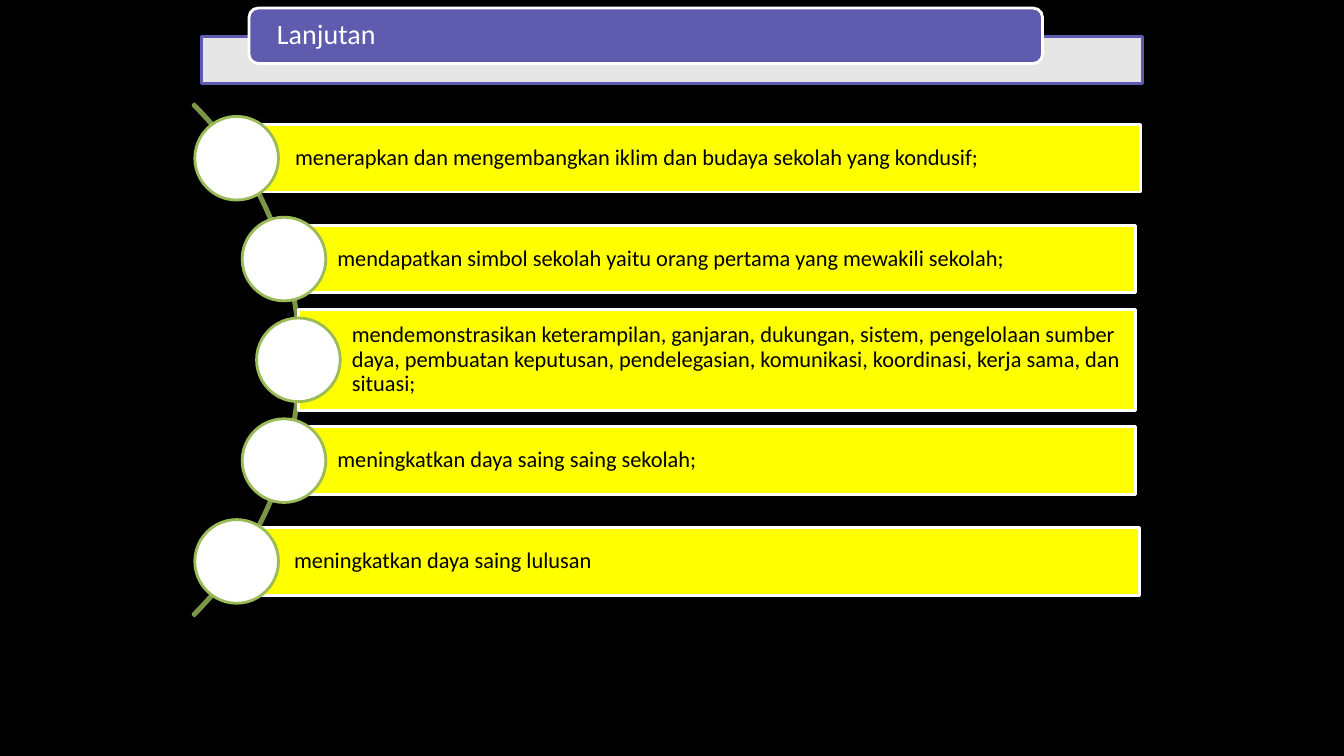
"""Build the 'Lanjutan' slide: a title tab and five bars strung along an arc."""
import math
import pptx
import pptx.util
import pptx.dml.color
import pptx.enum.shapes
import pptx.enum.text
import pptx.oxml
import pptx.oxml.ns

TITLE = "Lanjutan"
ITEMS = [
    {"text": "menerapkan dan mengembangkan iklim dan budaya sekolah yang kondusif;",
     "height": 0.67, "shift": 0.05},
    {"text": "mendapatkan simbol sekolah yaitu orang pertama yang mewakili sekolah;",
     "height": 0.67, "shift": 0},
    {"text": "mendemonstrasikan keterampilan, ganjaran, dukungan, sistem, pengelolaan "
             "sumber daya, pembuatan keputusan, pendelegasian, komunikasi, koordinasi, "
             "kerja sama, dan situasi;",
     "height": 1, "shift": 0},
    {"text": "meningkatkan daya saing saing sekolah;", "height": 0.67, "shift": 0},
    {"text": "meningkatkan daya saing lulusan", "height": 0.67, "shift": 0.04},
]
COLORS = {"back": "000000", "white": "FFFFFF", "violet": "5F5BAE", "yellow": "FFFF00",
          "arc": "7C9647", "ring": "9BBB59", "ink": "000000"}
FONT = "Calibri"
WIDTH, HEIGHT = 13.33, 7.5
PITCH = 1.0
CIRCLE = 0.83
ARC_X, ARC_Y = -0.61, 3.57
ARC_SIZE = 7.18
TRACK = 3.57
BAR_RIGHT = 11.26
SHAPES = pptx.enum.shapes.MSO_SHAPE


def rgb(name):
    return pptx.dml.color.RGBColor.from_string(COLORS[name])


def add_shape(s, kind, box, fill, line):
    sp = s.shapes.add_shape(kind, *[pptx.util.Inches(v) for v in box])
    sp.shadow.inherit = False
    if fill:
        sp.fill.solid()
        sp.fill.fore_color.rgb = rgb(fill)
    else:
        sp.fill.background()
    sp.line.color.rgb = rgb(line)
    sp.line.width = pptx.util.Pt(2)
    return sp


def add_text(sp, text, size, color, insets):
    tf = sp.text_frame
    tf.word_wrap = True
    tf.vertical_anchor = pptx.enum.text.MSO_ANCHOR.MIDDLE
    tf.margin_left, tf.margin_top, tf.margin_right, tf.margin_bottom = [
        pptx.util.Inches(v) for v in insets]
    p = tf.paragraphs[0]
    p.text = text
    p.alignment = pptx.enum.text.PP_ALIGN.LEFT
    p.line_spacing = 0.9
    f = p.runs[0].font
    f.name, f.size = FONT, pptx.util.Pt(size)
    f.color.rgb = rgb(color)


def add_title(s):
    panel = add_shape(s, SHAPES.RECTANGLE, (2, 0.36, 9.33, 0.47), "white", "violet")
    color = panel.fill._xPr.find(".//" + pptx.oxml.ns.qn("a:srgbClr"))
    color.append(pptx.oxml.parse_xml(
        "<a:alpha %s val='90000'/>" % pptx.oxml.ns.nsdecls("a")))
    tab = add_shape(s, SHAPES.ROUNDED_RECTANGLE, (2.47, 0.08, 7.87, 0.55), "violet", "white")
    add_text(tab, TITLE, 20, "white", (0.25, 0, 0.25, 0))


def add_arc(s):
    half = ARC_SIZE / 2
    arc = add_shape(s, SHAPES.BLOCK_ARC,
                    (ARC_X - half, ARC_Y - half, ARC_SIZE, ARC_SIZE), None, "arc")
    for i, value in enumerate((189, 27, 0.003)):
        arc.adjustments[i] = value


def add_items(s):
    for i, item in enumerate(ITEMS):
        dy = (i - (len(ITEMS) - 1) / 2) * PITCH
        x, y = ARC_X + math.sqrt(TRACK ** 2 - dy ** 2), ARC_Y + dy
        h, shift = item["height"], item["shift"]
        bar = add_shape(s, SHAPES.RECTANGLE,
                        (x + shift, y - h / 2, BAR_RIGHT - x, h), "yellow", "white")
        add_text(bar, item["text"], 16, "ink", (0.53, 0.04, 0.04, 0.04))
        add_shape(s, SHAPES.OVAL, (x - CIRCLE / 2, y - CIRCLE / 2, CIRCLE, CIRCLE),
                  "white", "ring")


def main():
    prs = pptx.Presentation()
    prs.slide_width = pptx.util.Inches(WIDTH)
    prs.slide_height = pptx.util.Inches(HEIGHT)
    s = prs.slides.add_slide(prs.slide_layouts[6])
    s.background.fill.solid()
    s.background.fill.fore_color.rgb = rgb("back")
    add_title(s)
    add_arc(s)
    add_items(s)
    prs.save("out.pptx")


if __name__ == "__main__":
    main()
